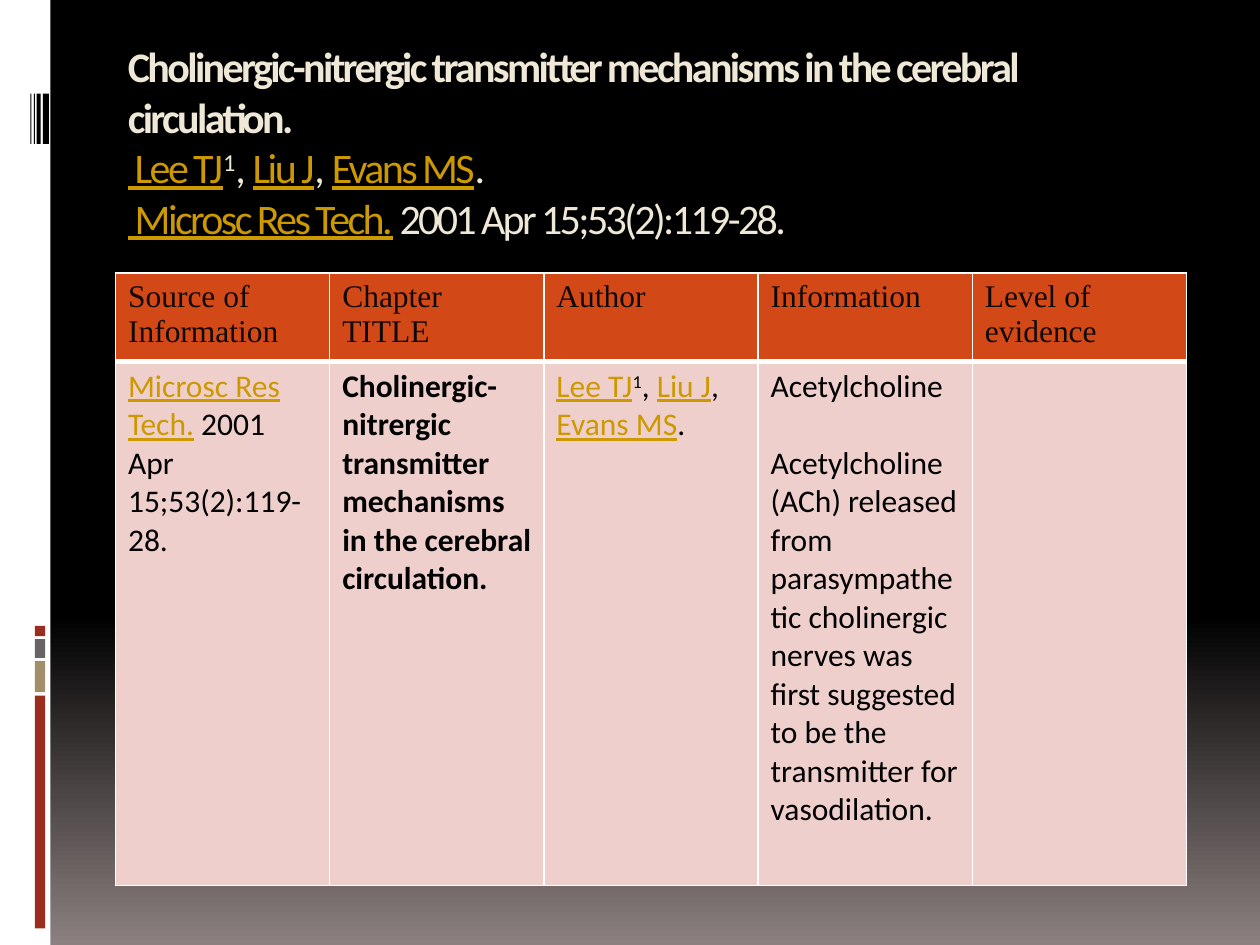
from lxml.etree import SubElement
from pptx import Presentation
from pptx.dml.color import RGBColor
from pptx.enum.shapes import MSO_SHAPE
from pptx.enum.text import MSO_ANCHOR
from pptx.oxml.ns import qn
from pptx.util import Pt

BLACK = RGBColor(0x00, 0x00, 0x00)
WHITE = RGBColor(0xFF, 0xFF, 0xFF)
MAUVE = RGBColor(0x8C, 0x80, 0x80)
RED = RGBColor(0x9B, 0x2D, 0x1F)
TAN = RGBColor(0xA2, 0x8E, 0x6A)
GRAY = RGBColor(0x69, 0x64, 0x64)
CREAM = RGBColor(0xEF, 0xE8, 0xD6)
GOLD = RGBColor(0xCC, 0x99, 0x00)
INK = RGBColor(0x0F, 0x0A, 0x08)
ORANGE = RGBColor(0xD3, 0x48, 0x17)
PINK = RGBColor(0xEF, 0xCF, 0xCC)


def write_spans(para, spans, color, size, spacing=0):
    para.font.name = "Calibri"
    para.font.size = Pt(size)
    for text, style in spans:
        span = para.add_run()
        span.text = text
        span.font.color.rgb = GOLD if style == "link" else color
        if style == "link":
            span.font.underline = True
        if style == "bold":
            span.font.bold = True
        if style == "super":
            span.font._element.set("baseline", "30000")
        if spacing:
            span.font._element.set("spc", str(spacing))


def set_borders(cell, bottom_width):
    properties = cell._tc.get_or_add_tcPr()
    widths = {"a:lnL": 1, "a:lnR": 1, "a:lnT": 1, "a:lnB": bottom_width}
    for tag, width in widths.items():
        line = SubElement(properties, qn(tag), w=str(Pt(width)))
        fill = SubElement(line, qn("a:solidFill"))
        SubElement(fill, qn("a:srgbClr"), val=str(WHITE))


deck = Presentation()
deck.slide_width = Pt(720)
deck.slide_height = Pt(540)
page = deck.slides.add_slide(deck.slide_layouts[6])

backdrop = page.background.fill
backdrop.gradient()
backdrop.gradient_angle = 270
for stop, color, position in zip(backdrop.gradient_stops, (BLACK, MAUVE), (0.65, 1)):
    stop.color.rgb = color
    stop.position = position

bars = [
    (0, 0, 28.8, 540, WHITE),
    (20, 397.5, 5.9, 133, RED),
    (20, 377.8, 5.9, 17.8, TAN),
    (20, 365.2, 5.9, 10.8, GRAY),
    (20, 357.7, 5.9, 5.8, RED),
    (24.5, 53.5, 3.5, 28.8, BLACK),
    (21, 53.5, 2.2, 28.8, BLACK),
    (19.3, 53.5, 0.7, 28.8, BLACK),
    (17.3, 53.5, 0.7, 28.8, BLACK),
]
for left, top, width, height, color in bars:
    bar = page.shapes.add_shape(MSO_SHAPE.RECTANGLE, Pt(left), Pt(top), Pt(width), Pt(height))
    bar.shadow.inherit = False
    bar.fill.solid()
    bar.fill.fore_color.rgb = color
    bar.line.fill.background()

article = [("Cholinergic-nitrergic transmitter mechanisms in the cerebral circulation.", "bold")]
coauthors = [("1", "super"), (", ", ""), ("Liu J", "link"), (", ", ""), ("Evans MS", "link"), (".", "")]
issue = (" 2001 Apr 15;53(2):119-28.", "")

title = page.shapes.add_textbox(Pt(66), Pt(18), Pt(612), Pt(126))
title.text_frame.word_wrap = True
title.text_frame.vertical_anchor = MSO_ANCHOR.MIDDLE
heading = title.text_frame.paragraphs[0]
write_spans(heading, article, CREAM, 24, -150)
heading.add_line_break()
write_spans(heading, [(" Lee TJ", "link")] + coauthors, CREAM, 24, -150)
heading.add_line_break()
write_spans(heading, [(" Microsc Res Tech.", "link"), issue], CREAM, 24, -150)

table = page.shapes.add_table(2, 5, Pt(66), Pt(156), Pt(612), Pt(346.5)).table
table.rows[0].height = Pt(47)
table.rows[1].height = Pt(299.5)

headers = ["Source of Information", "Chapter\nTITLE", "Author", "Information", "Level of evidence"]
for cell, text in zip(table.rows[0].cells, headers):
    cell.text = text
    cell.fill.solid()
    cell.fill.fore_color.rgb = ORANGE
    set_borders(cell, 3)
    for para in cell.text_frame.paragraphs:
        para.font.name = "Times New Roman"
        para.font.size = Pt(18)
        para.font.bold = False
        para.font.color.rgb = INK

finding = (
    "Acetylcholine (ACh) released from parasympathetic cholinergic nerves "
    "was first suggested to be the transmitter for vasodilation."
)
entries = [
    [[("Microsc Res Tech.", "link"), issue]],
    [article],
    [[("Lee TJ", "link")] + coauthors],
    [[("Acetylcholine", "")], [(finding, "")]],
    [],
]
for cell, entry in zip(table.rows[1].cells, entries):
    cell.fill.solid()
    cell.fill.fore_color.rgb = PINK
    set_borders(cell, 1)
    for index, spans in enumerate(entry):
        frame = cell.text_frame
        para = frame.add_paragraph() if index else frame.paragraphs[0]
        para.space_before = Pt(22 * index)
        write_spans(para, spans, BLACK, 18)

for cell in table.iter_cells():
    properties = cell._tc.tcPr
    properties.append(properties.find(qn("a:solidFill")))

deck.save("out.pptx")
